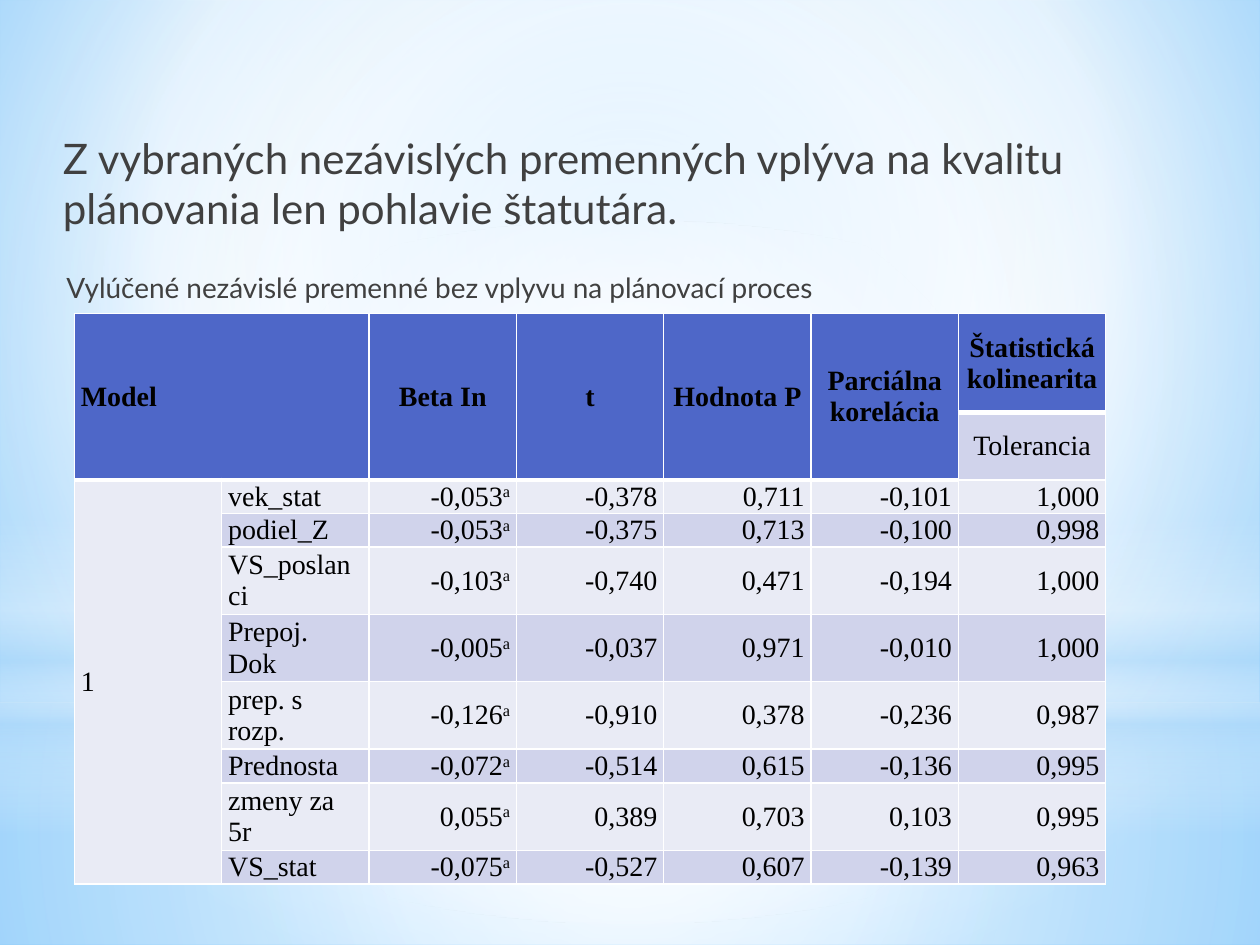
from dataclasses import dataclass

from lxml.etree import SubElement
from pptx import Presentation
from pptx.dml.color import RGBColor
from pptx.enum.shapes import MSO_SHAPE as Shape
from pptx.enum.text import MSO_ANCHOR as Anchor, MSO_AUTO_SIZE as AutoSize, PP_ALIGN as Align
from pptx.oxml import parse_xml
from pptx.oxml.ns import nsdecls, qn
from pptx.util import Cm, Pt


@dataclass(frozen=True)
class Theme:
    text: str = "404040"
    table_text: str = "000000"
    border: str = "FFFFFF"
    header: str = "4E67C8"
    light_band: str = "E9EBF5"
    dark_band: str = "D0D3EB"
    white: str = "FFFFFF"
    sky: str = "B4DCFA"
    backdrop_start: str = "9ED5FF"
    backdrop_end: str = "5BB9FF"
    font: str = "Lato"
    table_font: str = "Times New Roman"
    title_size: int = 24
    body_size: int = 16
    thin: int = 1
    thick: int = 3


THEME = Theme()
CENTER = (50, 50, 50, 50)
COLUMN_WIDTH = 2.97
ROW_HEIGHTS = (2, 1.22, 0.64, 0.64, 1.3, 1.02, 1.3, 0.69, 1.3, 0.64)
HEADERS = ("Model", "", "Beta In", "t", "Hodnota P", "Parciálna korelácia",
           "Štatistická kolinearita")
VARIABLES = (
    ("vek_stat", "-0,053", "-0,378", "0,711", "-0,101", "1,000"),
    ("podiel_Z", "-0,053", "-0,375", "0,713", "-0,100", "0,998"),
    ("VS_poslanci", "-0,103", "-0,740", "0,471", "-0,194", "1,000"),
    ("Prepoj. Dok", "-0,005", "-0,037", "0,971", "-0,010", "1,000"),
    ("prep. s rozp.", "-0,126", "-0,910", "0,378", "-0,236", "0,987"),
    ("Prednosta", "-0,072", "-0,514", "0,615", "-0,136", "0,995"),
    ("zmeny za 5r", "0,055", "0,389", "0,703", "0,103", "0,995"),
    ("VS_stat", "-0,075", "-0,527", "0,607", "-0,139", "0,963"),
)


def set_gradient(properties, stops, focus=None):
    gradient = parse_xml(f'<a:gradFill {nsdecls("a")} rotWithShape="1"/>')
    stop_list = SubElement(gradient, qn("a:gsLst"))
    for position, color, opacity in stops:
        stop = SubElement(stop_list, qn("a:gs"), pos=str(position * 1000))
        tint = SubElement(stop, qn("a:srgbClr"), val=color)
        if opacity < 100:
            SubElement(tint, qn("a:alpha"), val=str(opacity * 1000))
    if focus:
        circle = SubElement(gradient, qn("a:path"), path="circle")
        edges = {side: str(value * 1000) for side, value in zip("ltrb", focus)}
        SubElement(circle, qn("a:fillToRect"), **edges)
    else:
        SubElement(gradient, qn("a:lin"), ang="5400000", scaled="0")
    properties.replace(properties.find(qn("a:solidFill")), gradient)


def add_glow(slide, kind, top, height, stops, focus=CENTER):
    shape = slide.shapes.add_shape(kind, 0, Cm(top), Cm(25.4), Cm(height))
    shape.shadow.inherit = False
    shape.line.fill.background()
    shape.fill.solid()
    set_gradient(shape._element.spPr, stops, focus)


def add_backdrop(slide):
    white, sky = THEME.white, THEME.sky
    slide.background.fill.solid()
    set_gradient(slide._element.cSld.bg.bgPr,
                 ((0, THEME.backdrop_start, 100), (60, white, 100), (100, THEME.backdrop_end, 100)),
                 (20, 10, 20, 60))
    add_glow(slide, Shape.RECTANGLE, 14.17, 4.88, ((0, white, 91), (37, white, 76), (100, sky, 79)))
    add_glow(slide, Shape.RECTANGLE, 0, 14.17, ((0, white, 89), (48, white, 62), (100, sky, 79)))
    add_glow(slide, Shape.RECTANGLE, 10.46, 6.35,
             ((0, white, 0), (29, white, 30), (45, sky, 40),
              (55, white, 26), (65, sky, 60), (100, white, 0)), None)
    add_glow(slide, Shape.OVAL, 4.45, 14.17, ((0, white, 100), (56, white, 0)))


def format_run(run, font, size, color, bold=False):
    run.font.name = font
    run.font.size = Pt(size)
    run.font.bold = bold
    run.font.color.rgb = RGBColor.from_string(color)


def add_text(slide, text, left, top, width, height, size):
    frame = slide.shapes.add_textbox(Cm(left), Cm(top), Cm(width), Cm(height)).text_frame
    frame.word_wrap = True
    frame.text = text
    format_run(frame.paragraphs[0].runs[0], THEME.font, size, THEME.text)
    return frame


def set_borders(cell, bottom_width):
    properties = cell._tc.get_or_add_tcPr()
    for side in "LRTB":
        width = bottom_width if side == "B" else THEME.thin
        line = SubElement(properties, qn(f"a:ln{side}"), w=str(Pt(width)))
        fill = SubElement(line, qn("a:solidFill"))
        SubElement(fill, qn("a:srgbClr"), val=THEME.border)


def fill_cell(cell, text, color, alignment, bold=False, note="", bottom_width=THEME.thin):
    set_borders(cell, bottom_width)
    cell.fill.solid()
    cell.fill.fore_color.rgb = RGBColor.from_string(color)
    cell.vertical_anchor = Anchor.MIDDLE
    cell.margin_left = cell.margin_right = Cm(0.13)
    cell.margin_top = cell.margin_bottom = 0
    paragraph = cell.text_frame.paragraphs[0]
    paragraph.alignment = alignment
    paragraph._p.get_or_add_endParaRPr().set("sz", str(THEME.body_size * 100))
    if text:
        paragraph.text = text
    if note:
        paragraph.add_run().text = note
    for run in paragraph.runs:
        format_run(run, THEME.table_font, THEME.body_size, THEME.table_text, bold)
    if note:
        paragraph.runs[-1].font._element.set("baseline", "30000")


def add_variable_table(slide):
    rows, columns = len(ROW_HEIGHTS), len(HEADERS)
    table = slide.shapes.add_table(rows, columns, Cm(1.5), Cm(6.32),
                                   Cm(COLUMN_WIDTH * columns), Cm(sum(ROW_HEIGHTS))).table
    for column in table.columns:
        column.width = Cm(COLUMN_WIDTH)
    for row, height in zip(table.rows, ROW_HEIGHTS):
        row.height = Cm(height)

    last = columns - 1
    for index, text in enumerate(HEADERS):
        alignment = Align.CENTER if index else Align.LEFT
        fill_cell(table.cell(0, index), text, THEME.header, alignment, True,
                  bottom_width=THEME.thick)
        if index < last:
            fill_cell(table.cell(1, index), "", THEME.header, alignment)
    fill_cell(table.cell(1, last), "Tolerancia", THEME.dark_band, Align.CENTER)

    for number, values in enumerate(VARIABLES):
        band = THEME.dark_band if number % 2 else THEME.light_band
        model = "" if number else "1"
        fill_cell(table.cell(number + 2, 0), model, THEME.light_band, Align.LEFT)
        for index, text in enumerate(values, 1):
            alignment = Align.LEFT if index == 1 else Align.RIGHT
            note = "a" if index == 2 else ""
            fill_cell(table.cell(number + 2, index), text, band, alignment, note=note)

    table.cell(0, 0).merge(table.cell(1, 1))
    for index in range(2, last):
        table.cell(0, index).merge(table.cell(1, index))
    table.cell(2, 0).merge(table.cell(rows - 1, 0))


def main():
    presentation = Presentation()
    presentation.slide_width, presentation.slide_height = Cm(25.4), Cm(19.05)
    slide = presentation.slides.add_slide(presentation.slide_layouts[6])
    add_backdrop(slide)
    title = add_text(slide, "Z vybraných nezávislých premenných vplýva na kvalitu "
                     "plánovania len pohlavie štatutára.",
                     0.89, 0.74, 24, 18.31, THEME.title_size)
    title.margin_left, title.margin_top = Cm(0.38), Cm(1.93)
    add_variable_table(slide)
    caption = add_text(slide, "Vylúčené nezávislé premenné bez vplyvu na plánovací proces",
                       1.09, 5.33, 23.19, 0.94, THEME.body_size)
    caption.auto_size = AutoSize.SHAPE_TO_FIT_TEXT
    presentation.save("out.pptx")


if __name__ == "__main__":
    main()
